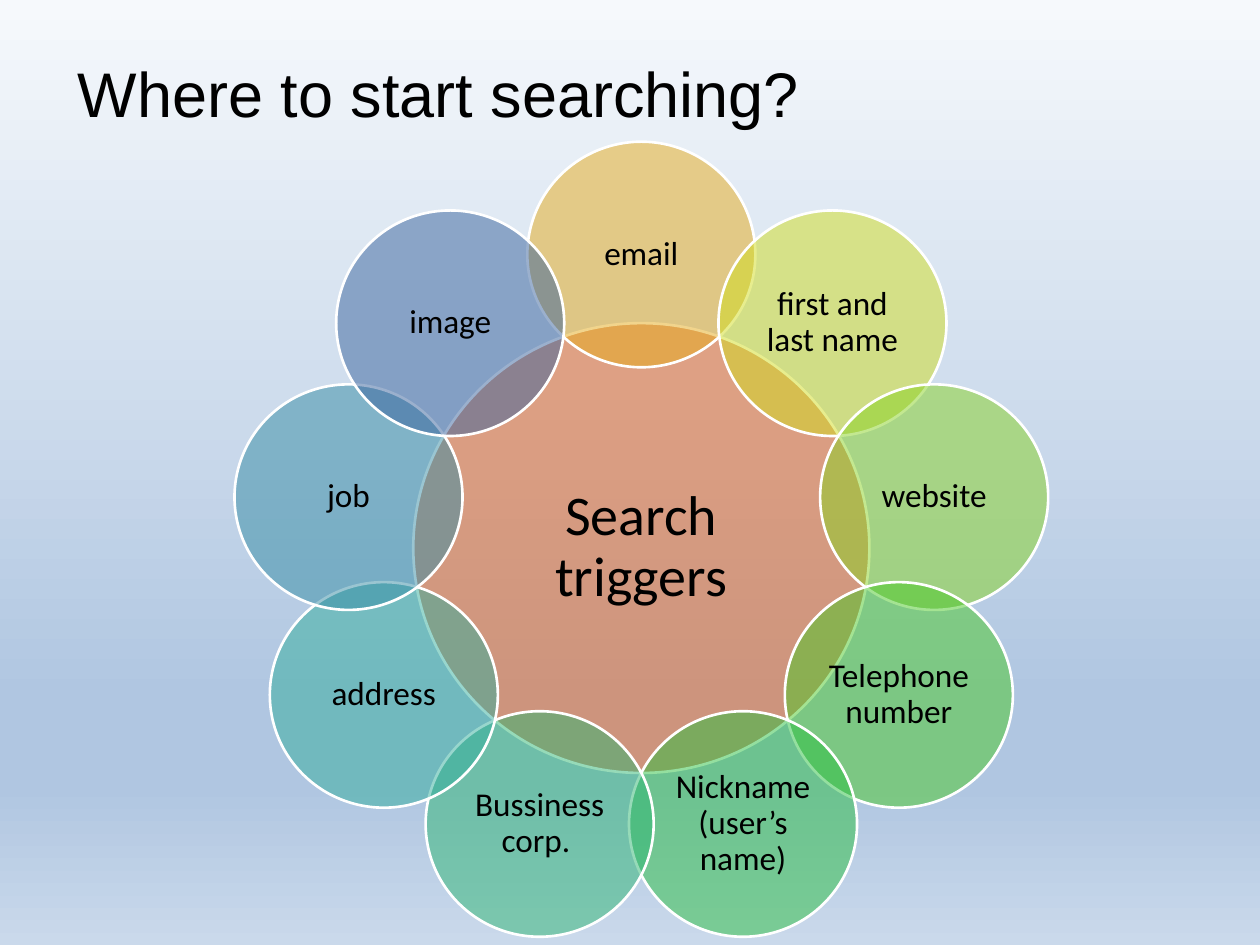
from dataclasses import dataclass
from math import cos, radians, sin

from lxml import etree
from pptx import Presentation
from pptx.dml.color import RGBColor
from pptx.enum.shapes import MSO_SHAPE
from pptx.enum.text import MSO_ANCHOR, MSO_AUTO_SIZE, PP_ALIGN
from pptx.oxml.ns import qn
from pptx.slide import Slide
from pptx.util import Inches, Pt

ELLIPSE = MSO_SHAPE.OVAL
MIDDLE = MSO_ANCHOR.MIDDLE
CENTER = PP_ALIGN.CENTER
GROW = MSO_AUTO_SIZE.SHAPE_TO_FIT_TEXT

COLORS = {
    "text": "000000",
    "outline": "FFFFFF",
    "sky_top": "F6F9FC",
    "sky_deep": "B0C6E1",
    "sky_bottom": "CAD9EB",
    "hub": "EB641B",
    "email": "E5AB1B",
    "name": "D0DD1F",
    "website": "88D323",
    "telephone": "4AC927",
    "nickname": "2BC041",
    "business": "2FB773",
    "address": "33AE9D",
    "job": "368DA5",
    "image": "39639D",
}
SKY_STOPS = [(0, "sky_top"), (74, "sky_deep"), (83, "sky_deep"), (100, "sky_bottom")]
HUB_X, HUB_Y = 5.09, 4.35
ORBIT_X, ORBIT_Y = 2.36, 2.33


@dataclass(frozen=True)
class CircleStyle:
    width: float
    height: float
    inset: float
    font_size: float
    space_after: float


@dataclass(frozen=True)
class Trigger:
    label: str
    color: str


HUB_STYLE = CircleStyle(3.62, 3.57, 0.04, 32, 11.2)
PETAL_STYLE = CircleStyle(1.81, 1.79, 0.03, 19, 6.7)
HUB = Trigger("Search triggers", "hub")
PETALS = [
    Trigger("email", "email"),
    Trigger("first and last name", "name"),
    Trigger("website", "website"),
    Trigger("Telephone number", "telephone"),
    Trigger("Nickname (user’s name)", "nickname"),
    Trigger("Bussiness corp. ", "business"),
    Trigger("address", "address"),
    Trigger("job", "job"),
    Trigger("image", "image"),
]


def rgb(name: str) -> RGBColor:
    return RGBColor.from_string(COLORS[name])


def paint_sky(slide: Slide) -> None:
    fill = slide.background.fill
    fill.gradient()
    fill.gradient_angle = 270
    stops = next(slide.element.iter(qn("a:gsLst")))
    for default_stop in list(stops):
        stops.remove(default_stop)
    for percent, color in SKY_STOPS:
        stop = etree.SubElement(stops, qn("a:gs"), pos=str(percent * 1000))
        etree.SubElement(stop, qn("a:srgbClr"), val=COLORS[color])


def add_circle(slide: Slide, trigger: Trigger, style: CircleStyle, x: float, y: float) -> None:
    circle = slide.shapes.add_shape(
        ELLIPSE,
        Inches(x - style.width / 2),
        Inches(y - style.height / 2),
        Inches(style.width),
        Inches(style.height),
    )
    circle.shadow.inherit = False
    circle.fill.solid()
    circle.fill.fore_color.rgb = rgb(trigger.color)
    tint = next(circle.element.spPr.iter(qn("a:srgbClr")))
    etree.SubElement(tint, qn("a:alpha"), val="50000")
    circle.line.color.rgb = rgb("outline")
    circle.line.width = Pt(1.5)

    frame = circle.text_frame
    frame.word_wrap = True
    frame.vertical_anchor = MIDDLE
    frame.margin_left = frame.margin_right = Inches(style.inset)
    frame.margin_top = frame.margin_bottom = Inches(style.inset)
    label = frame.paragraphs[0]
    label.text = trigger.label
    label.alignment = CENTER
    label.line_spacing = 0.9
    label.space_after = Pt(style.space_after)
    label.font.name = "Calibri"
    label.font.size = Pt(style.font_size)
    label.font.color.rgb = rgb("text")


def add_title(slide: Slide, text: str) -> None:
    title = slide.shapes.add_textbox(Inches(0.52), Inches(0.38), Inches(9.48), Inches(0.71))
    title.text_frame.word_wrap = True
    title.text_frame.auto_size = GROW
    heading = title.text_frame.paragraphs[0]
    heading.text = text
    heading.font.name = "Arial"
    heading.font.size = Pt(36)
    heading.font.color.rgb = rgb("text")


def main() -> None:
    deck = Presentation()
    deck.slide_width = Inches(10)
    deck.slide_height = Inches(7.5)
    slide = deck.slides.add_slide(deck.slide_layouts[6])
    paint_sky(slide)
    add_circle(slide, HUB, HUB_STYLE, HUB_X, HUB_Y)
    for index, petal in enumerate(PETALS):
        angle = radians(index * 360 / len(PETALS))
        x = HUB_X + ORBIT_X * sin(angle)
        y = HUB_Y - ORBIT_Y * cos(angle)
        add_circle(slide, petal, PETAL_STYLE, x, y)
    add_title(slide, "Where to start searching?")
    deck.save("out.pptx")


if __name__ == "__main__":
    main()
